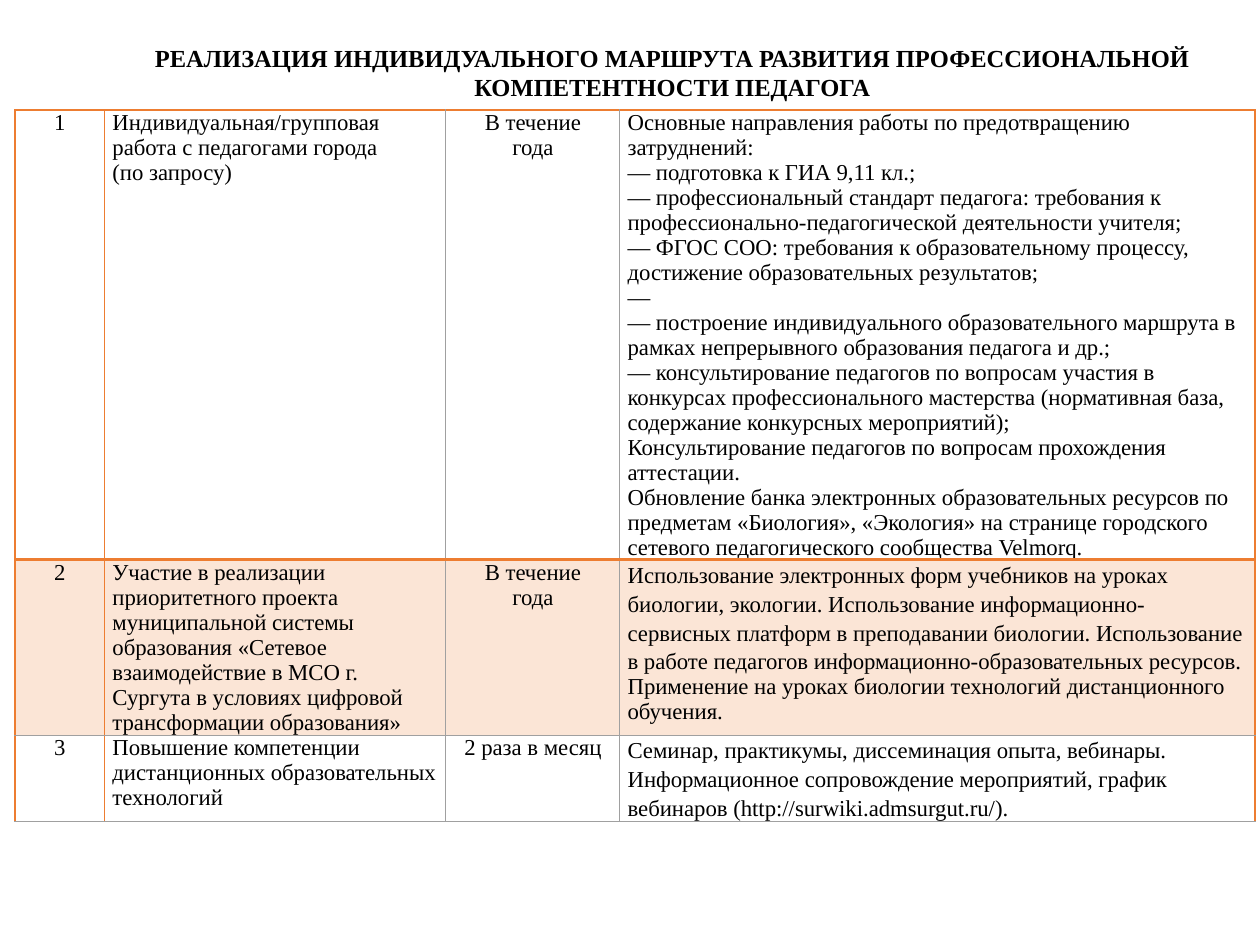
from lxml import etree
from pptx import Presentation
from pptx.dml.color import RGBColor
from pptx.enum import text
from pptx.oxml import ns
from pptx.util import Pt

FONT = "Times New Roman"
BLACK, ORANGE, GRAY, PEACH = "000000", "ED7D31", "A0A0A0", "FBE5D6"
TITLE = ("РЕАЛИЗАЦИЯ ИНДИВИДУАЛЬНОГО МАРШРУТА РАЗВИТИЯ ПРОФЕССИОНАЛЬНОЙ "
         "КОМПЕТЕНТНОСТИ ПЕДАГОГА")
ROWS = [
    [["1"],
     ["Индивидуальная/групповая работа с педагогами города", "(по запросу)"],
     ["В течение", "года"],
     ["Основные направления работы по предотвращению затруднений:",
      "— подготовка к ГИА 9,11 кл.;",
      "— профессиональный стандарт педагога: требования к "
      "профессионально-педагогической деятельности учителя;",
      "— ФГОС СОО: требования к образовательному процессу, "
      "достижение образовательных результатов;",
      "—",
      "— построение индивидуального образовательного маршрута в рамках "
      "непрерывного образования педагога и др.;",
      "— консультирование педагогов по вопросам участия в конкурсах "
      "профессионального мастерства (нормативная база, содержание "
      "конкурсных мероприятий);",
      "Консультирование педагогов по вопросам прохождения аттестации.",
      "Обновление банка электронных образовательных ресурсов по предметам "
      "«Биология», «Экология» на странице городского сетевого "
      "педагогического сообщества Velmorq."]],
    [["2"],
     ["Участие в реализации приоритетного проекта муниципальной системы "
      "образования «Сетевое взаимодействие в МСО г. Сургута в условиях "
      "цифровой трансформации образования»"],
     ["В течение", "года"],
     ["Использование электронных форм учебников на уроках биологии, экологии. "
      "Использование информационно-сервисных платформ в преподавании биологии. "
      "Использование в работе педагогов информационно-образовательных ресурсов.",
      "Применение на уроках биологии технологий дистанционного обучения."]],
    [["3"],
     ["Повышение компетенции дистанционных образовательных технологий"],
     ["2 раза в месяц"],
     ["Семинар, практикумы, диссеминация опыта, вебинары.",
      "Информационное сопровождение мероприятий, график вебинаров "
      "(http://surwiki.admsurgut.ru/)."]],
]
COL_WIDTHS = [51.2, 195, 99.4, 362.9]
ROW_HEIGHTS = [257, 100, 49]
FILLS = [None, PEACH, None]
CENTERED = {0, 2}
SPACED = {(1, 3, 0), (2, 3, 0), (2, 3, 1)}
THIN, MEDIUM, THICK = (GRAY, 0.5), (ORANGE, 1), (ORANGE, 2)
COL_LINES = [MEDIUM, MEDIUM, THIN, THIN, MEDIUM]
ROW_LINES = [MEDIUM, THICK, THIN, THIN]


def rgb(value):
    return RGBColor.from_string(value)


def style(p, size, bold=False):
    p.font.name, p.font.size, p.font.bold = FONT, Pt(size), bold
    p.font.color.rgb = rgb(BLACK)


def add_border(cell, side, line):
    color, width = line
    ln = etree.SubElement(cell._tc.get_or_add_tcPr(), ns.qn(f"a:ln{side}"), w=str(Pt(width)))
    fill = etree.SubElement(ln, ns.qn("a:solidFill"))
    etree.SubElement(fill, ns.qn("a:srgbClr"), val=color)


def fill_cell(cell, row, col):
    cell.margin_left = cell.margin_right = Pt(4.5)
    cell.margin_top = cell.margin_bottom = 0
    lines = zip("LRTB", (COL_LINES[col], COL_LINES[col + 1],
                         ROW_LINES[row], ROW_LINES[row + 1]))
    for side, line in lines:
        add_border(cell, side, line)
    if FILLS[row]:
        cell.fill.solid()
        cell.fill.fore_color.rgb = rgb(FILLS[row])
    else:
        cell.fill.background()
    cell.text_frame.text = "\n".join(ROWS[row][col])
    for i, p in enumerate(cell.text_frame.paragraphs):
        style(p, 13)
        p.alignment = text.PP_ALIGN.CENTER if col in CENTERED else text.PP_ALIGN.LEFT
        if (row, col, i) in SPACED:
            p.line_spacing = 1.15


def add_title(s):
    sp = s.shapes.title
    sp.left, sp.top, sp.width, sp.height = Pt(20.2), Pt(20.9), Pt(692), Pt(41)
    tf = sp.text_frame
    tf.text = TITLE
    tf.word_wrap = True
    tf.auto_size = text.MSO_AUTO_SIZE.NONE
    tf.vertical_anchor = text.MSO_ANCHOR.TOP
    p = tf.paragraphs[0]
    p.alignment = text.PP_ALIGN.CENTER
    p._p.get_or_add_pPr().set("marL", str(Pt(36)))
    style(p, 14, True)


def add_plan(s):
    table = s.shapes.add_table(len(ROWS), len(COL_WIDTHS), Pt(8.6), Pt(62.8),
                               Pt(sum(COL_WIDTHS)), Pt(sum(ROW_HEIGHTS))).table
    table.first_row = table.horz_banding = False
    for column, width in zip(table.columns, COL_WIDTHS):
        column.width = Pt(width)
    for i, height in enumerate(ROW_HEIGHTS):
        table.rows[i].height = Pt(height)
        for j in range(len(COL_WIDTHS)):
            fill_cell(table.cell(i, j), i, j)


def main():
    prs = Presentation()
    prs.slide_width, prs.slide_height = Pt(720), Pt(540)
    s = prs.slides.add_slide(prs.slide_layouts[5])
    add_plan(s)
    add_title(s)
    prs.save("out.pptx")


if __name__ == "__main__":
    main()
